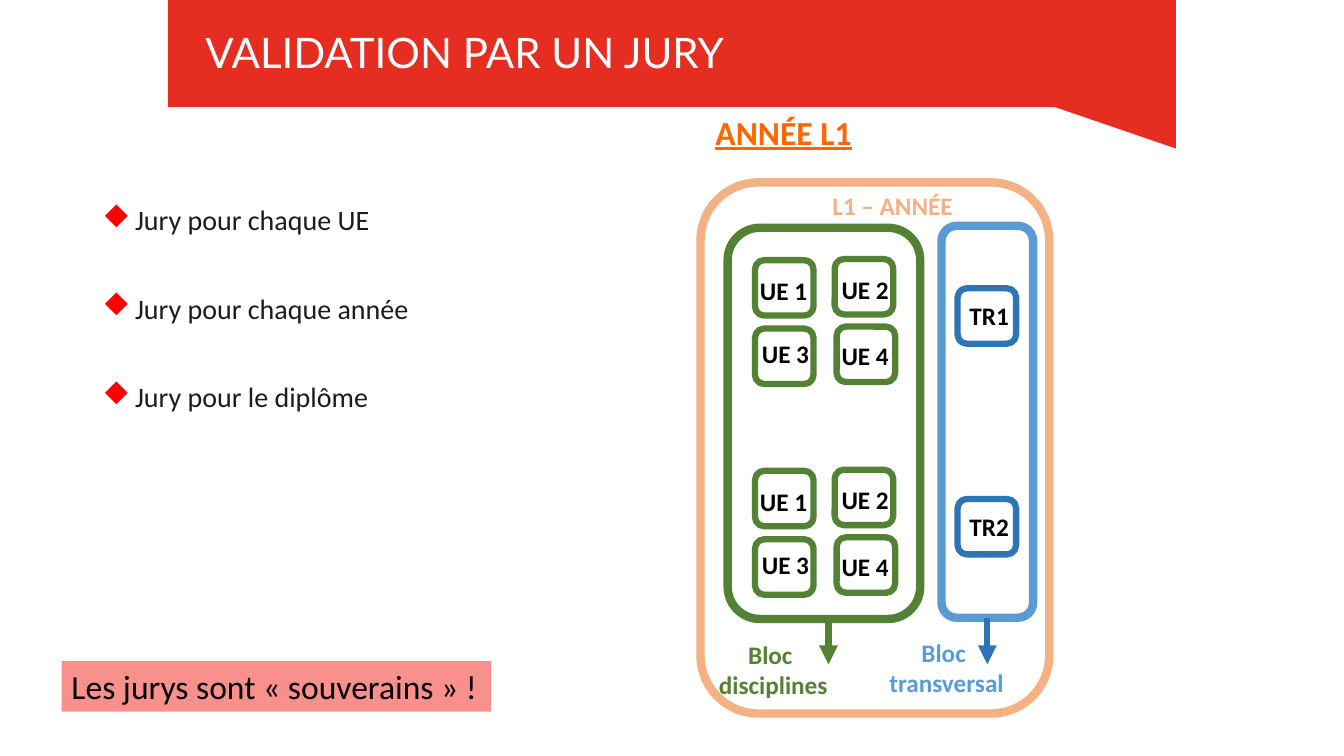
"""Build the slide on validation by a jury, with the blocks of year L1."""
from dataclasses import dataclass

from lxml.etree import SubElement
from pptx import Presentation
from pptx.dml.color import RGBColor
from pptx.enum.shapes import MSO_CONNECTOR, MSO_SHAPE as SHAPE
from pptx.enum.text import MSO_AUTO_SIZE as AUTO, PP_ALIGN as ALIGN
from pptx.oxml.ns import qn
from pptx.util import Pt


@dataclass(frozen=True)
class Theme:
    banner: str = "E62D21"
    white: str = "FFFFFF"
    black: str = "000000"
    body: str = "1C1C1C"
    bullet: str = "FF0000"
    callout: str = "F9908B"
    heading: str = "FF6600"
    year: str = "F4B183"
    green: str = "548235"
    blue: str = "5B9BD5"
    dark_blue: str = "2E75B6"
    font: str = "Calibri"
    title_font: str = "Lato"
    bullet_font: str = "Wingdings"
    title_size: float = 30
    large: float = 24
    list_size: float = 20
    label: float = 18
    thick: float = 6
    medium: float = 4.5


THEME = Theme()

TITLE = "VALIDATION PAR UN JURY"
JURIES = ["Jury pour chaque UE", "Jury pour chaque année", "Jury pour le diplôme"]
DIAMOND = "u"
CALLOUT = "Les jurys sont «\u00a0souverains\u00a0» !"
HEADING = "ANNÉE L1"
YEAR = "L1 – ANNÉE"
UNITS = [
    ("UE 1", (539.3, 185.8), (535.7, 193)),
    ("UE 2", (596.2, 185), (594, 192.2)),
    ("UE 3", (539.3, 234.7), (537.1, 238.3)),
    ("UE 4", (597.6, 233.3), (594, 239.8)),
]
TRANSVERSALS = ["TR1", "TR2"]
TRANSVERSAL_BOX, TRANSVERSAL_TEXT = (684, 205.9), (685.4, 211)
SEMESTER_STEP = 150.5
UNIT_SIZE = (41.8, 39.6)
YEAR_BLOCK = (500.4, 130.3, 249.1, 379.4)
DISCIPLINE_BLOCK = (519.8, 162.7, 137.5, 279.4)
TRANSVERSAL_BLOCK = (672.5, 161.3, 65.5, 280)
ARROW_END = 474.5
DISCIPLINE_ARROW_LEFT = 591.8

deck = Presentation()
deck.slide_width, deck.slide_height = Pt(960), Pt(540)
page = deck.slides.add_slide(deck.slide_layouts[6])


def put_shape(kind, area, fill=None, line=None, width=0):
    shape = page.shapes.add_shape(kind, *map(Pt, area))
    shape.shadow.inherit = False
    if fill:
        shape.fill.solid()
        shape.fill.fore_color.rgb = RGBColor.from_string(fill)
    else:
        shape.fill.background()
    if line:
        shape.line.color.rgb = RGBColor.from_string(line)
        shape.line.width = Pt(width)
    else:
        shape.line.fill.background()
    return shape


def add_bullet(para, indent):
    properties = para._p.get_or_add_pPr()
    properties.set("marL", str(Pt(indent)))
    properties.set("indent", str(-Pt(indent)))
    color = SubElement(properties, qn("a:buClr"))
    SubElement(color, qn("a:srgbClr"), val=THEME.bullet)
    SubElement(properties, qn("a:buFont"), typeface=THEME.bullet_font,
               pitchFamily="2", charset="2")
    SubElement(properties, qn("a:buChar"), char=DIAMOND)


def put_text(lines, area, size=THEME.label, color=THEME.black, font=THEME.font,
             bold=False, underline=False, align=ALIGN.LEFT, wrap=True, grow=True,
             fill=None, indent=0, spacing=None, gap=0):
    box = page.shapes.add_textbox(*map(Pt, area))
    if fill:
        box.fill.solid()
        box.fill.fore_color.rgb = RGBColor.from_string(fill)
    frame = box.text_frame
    frame.word_wrap = wrap
    frame.auto_size = AUTO.SHAPE_TO_FIT_TEXT if grow else AUTO.NONE
    for number, line in enumerate(lines):
        para = frame.add_paragraph() if number else frame.paragraphs[0]
        para.alignment = align
        if spacing:
            para.line_spacing = spacing
        if number and gap:
            para.space_before = Pt(gap)
        if indent:
            add_bullet(para, indent)
        span = para.add_run()
        span.text = line
        span.font.name, span.font.size = font, Pt(size)
        span.font.bold, span.font.underline = bold, underline
        span.font.color.rgb = RGBColor.from_string(color)
    return box


def put_arrow(left, top, color, source=None):
    arrow = page.shapes.add_connector(
        MSO_CONNECTOR.STRAIGHT, Pt(left), Pt(top), Pt(left), Pt(ARROW_END))
    if source:
        arrow.begin_connect(source, 2)
    arrow.line.color.rgb = RGBColor.from_string(color)
    arrow.line.width = Pt(THEME.medium)
    SubElement(arrow.line._get_or_add_ln(), qn("a:tailEnd"), type="triangle")
    SubElement(arrow._element.spPr, qn("a:effectLst"))


def put_unit(label, corner, text_corner, shift, color, text_width):
    box_area = (corner[0], corner[1] + shift, *UNIT_SIZE)
    text_area = (text_corner[0], text_corner[1] + shift, text_width, 28.8)
    put_shape(SHAPE.ROUNDED_RECTANGLE, box_area, line=color, width=THEME.medium)
    put_text([label], text_area, bold=True, wrap=False)


put_text(JURIES, (66.2, 144, 828, 342.7), size=THEME.list_size, color=THEME.body,
         grow=False, indent=23.2, spacing=0.9, gap=41.5)

put_shape(SHAPE.RECTANGLE, (120, -2, 720, 78.5), fill=THEME.banner)
banner_corner = put_shape(SHAPE.RIGHT_TRIANGLE, (737, 70.8, 103, 35.3), fill=THEME.banner)
banner_corner.rotation = 180
put_text([TITLE], (139.7, 15.1, 634.3, 43.9), size=THEME.title_size,
         color=THEME.white, font=THEME.title_font)
put_text([CALLOUT], (44, 472.3, 306.7, 36), size=THEME.large, fill=THEME.callout)

for semester, transversal in enumerate(TRANSVERSALS):
    shift = semester * SEMESTER_STEP
    for label, unit_corner, text_corner in UNITS:
        put_unit(label, unit_corner, text_corner, shift, THEME.green, 49)
    put_unit(transversal, TRANSVERSAL_BOX, TRANSVERSAL_TEXT, shift,
             THEME.dark_blue, 43.2)

year_block, discipline_block, transversal_block = [
    put_shape(SHAPE.ROUNDED_RECTANGLE, area, line=color, width=THEME.thick)
    for area, color in [(YEAR_BLOCK, THEME.year), (DISCIPLINE_BLOCK, THEME.green),
                        (TRANSVERSAL_BLOCK, THEME.blue)]]
put_arrow(TRANSVERSAL_BLOCK[0] + TRANSVERSAL_BLOCK[2] / 2,
          TRANSVERSAL_BLOCK[1] + TRANSVERSAL_BLOCK[3], THEME.dark_blue,
          transversal_block)
put_arrow(DISCIPLINE_ARROW_LEFT, DISCIPLINE_BLOCK[1] + DISCIPLINE_BLOCK[3], THEME.green)

put_text([YEAR], (587.5, 132.5, 101.5, 28.8), color=THEME.year, bold=True, wrap=False)
put_text(["Bloc ", "transversal"], (619.2, 451.4, 113.8, 51), color=THEME.blue,
         bold=True, align=ALIGN.CENTER)
put_text(["Bloc ", "disciplines"], (495.4, 452.9, 113.8, 51), color=THEME.green,
         bold=True, align=ALIGN.CENTER)
put_text([HEADING], (504, 76.3, 112.3, 36), size=THEME.large, color=THEME.heading,
         bold=True, underline=True, wrap=False)

deck.save("out.pptx")
